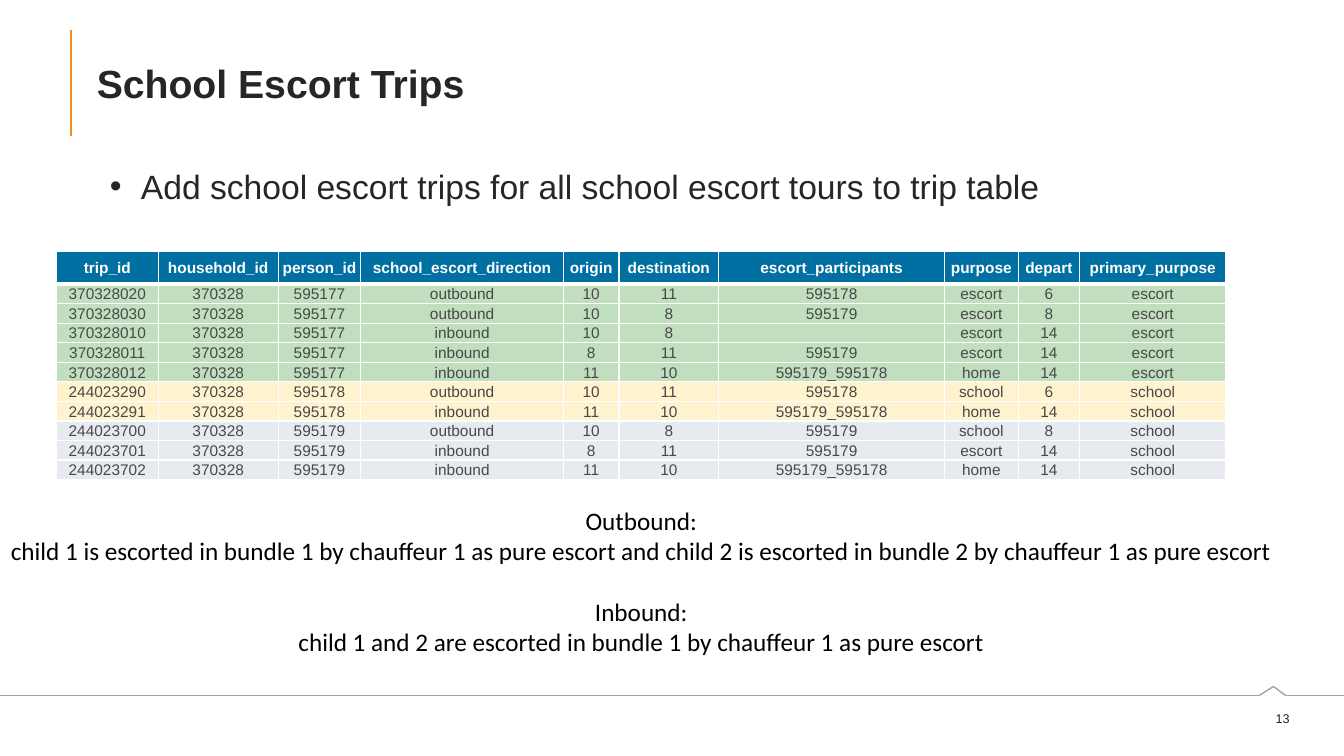
from itertools import pairwise

from lxml.etree import SubElement
from pptx import Presentation
from pptx.dml.color import RGBColor
from pptx.enum.shapes import MSO_CONNECTOR as Connector
from pptx.enum.text import MSO_ANCHOR as Anchor, PP_ALIGN as Align
from pptx.oxml.ns import qn
from pptx.util import Inches, Pt

DARK, WHITE, ORANGE, GRAY = "262626", "FFFFFF", "F68B1F", "A3A3A5"
HEADER_FILL, CELL_TEXT = "006FA1", "48484A"
GREEN, YELLOW, PALE = "C1DFBF", "FFF3CF", "E7EBF0"

COLUMNS = {
    "trip_id": 1.01, "household_id": 1.19, "person_id": 0.82,
    "school_escort_direction": 2.01, "origin": 0.55, "destination": 0.99,
    "escort_participants": 2.24, "purpose": 0.73, "depart": 0.61,
    "primary_purpose": 1.45,
}
HOUSEHOLD = "370328"
# Each person: id, row fill, primary purpose, and the trips as
# (trip, direction, origin, destination, participants, purpose, depart)
PERSONS = [
    ("595177", GREEN, "escort", [
        ("370328020", "outbound", "10", "11", "595178", "escort", "6"),
        ("370328030", "outbound", "10", "8", "595179", "escort", "8"),
        ("370328010", "inbound", "10", "8", "", "escort", "14"),
        ("370328011", "inbound", "8", "11", "595179", "escort", "14"),
        ("370328012", "inbound", "11", "10", "595179_595178", "home", "14"),
    ]),
    ("595178", YELLOW, "school", [
        ("244023290", "outbound", "10", "11", "595178", "school", "6"),
        ("244023291", "inbound", "11", "10", "595179_595178", "home", "14"),
    ]),
    ("595179", PALE, "school", [
        ("244023700", "outbound", "10", "8", "595179", "school", "8"),
        ("244023701", "inbound", "8", "11", "595179", "escort", "14"),
        ("244023702", "inbound", "11", "10", "595179_595178", "home", "14"),
    ]),
]
NOTES = [
    ("Outbound:", "child 1 is escorted in bundle 1 by chauffeur 1 as pure escort "
                  "and child 2 is escorted in bundle 2 by chauffeur 1 as pure escort"),
    ("Inbound:", "child 1 and 2 are escorted in bundle 1 by chauffeur 1 as pure escort"),
]


def color(hex_string):
    return RGBColor.from_string(hex_string)


def add_span(para, text, size, hex_string, font="Arial", bold=False):
    span = para.add_run()
    span.text = text
    span.font.name = font
    span.font.size = Pt(size)
    span.font.bold = bold
    span.font.color.rgb = color(hex_string)


def add_line(slide, start, end, hex_string, width):
    line = slide.shapes.add_connector(
        Connector.STRAIGHT, *(Inches(value) for value in (*start, *end)))
    line.line.color.rgb = color(hex_string)
    line.line.width = Pt(width)
    SubElement(line._element.spPr, qn("a:effectLst"))


def add_text_frame(slide, box):
    frame = slide.shapes.add_textbox(*map(Inches, box)).text_frame
    frame.word_wrap = True
    return frame


def fill_title(slide, box):
    left, top, width, height = box
    add_line(slide, (left - 0.16, top), (left - 0.16, top + height), ORANGE, 1.5)
    title = slide.shapes.title
    title.left, title.top, title.width, title.height = map(Inches, box)
    title.text_frame.vertical_anchor = Anchor.MIDDLE
    para = title.text_frame.paragraphs[0]
    para.alignment = Align.LEFT
    add_span(para, "School Escort Trips", 28, DARK, bold=True)


def add_bullet(slide, box):
    para = add_text_frame(slide, box).paragraphs[0]
    properties = para._p.get_or_add_pPr()
    properties.set("marL", str(Inches(0.44)))
    properties.set("indent", str(Inches(-0.31)))
    SubElement(properties, qn("a:buFont"), typeface="Arial")
    SubElement(properties, qn("a:buChar"), char="•")
    add_span(para, "Add school escort trips for all school escort tours to trip table",
             24, DARK)


def add_borders(cell, top, bottom):
    """Draw white cell borders; top and bottom are widths in points."""
    properties = cell._tc.get_or_add_tcPr()
    for tag, width in (("lnL", 1), ("lnR", 1), ("lnT", top), ("lnB", bottom)):
        line = SubElement(properties, qn(f"a:{tag}"), w=str(Pt(width)))
        fill = SubElement(line, qn("a:solidFill"))
        SubElement(fill, qn("a:srgbClr"), val=WHITE)


def fill_cell(cell, text, fill, hex_string, bold, top, bottom):
    cell.margin_left = cell.margin_right = cell.margin_top = Inches(0.01)
    cell.margin_bottom = 0
    cell.vertical_anchor = Anchor.MIDDLE
    add_borders(cell, top, bottom)
    cell.fill.solid()
    cell.fill.fore_color.rgb = color(fill)
    para = cell.text_frame.paragraphs[0]
    para.alignment = Align.CENTER
    if text:
        add_span(para, text, 11, hex_string, bold=bold)
    else:
        SubElement(para._p, qn("a:endParaRPr"), sz="1100")


def add_trip_table(slide, box):
    rows = [(HEADER_FILL, list(COLUMNS))]
    for person, fill, primary, trips in PERSONS:
        for trip, *details in trips:
            rows.append((fill, [trip, HOUSEHOLD, person, *details, primary]))
    frame = slide.shapes.add_table(len(rows), len(COLUMNS), *map(Inches, box))
    table = frame.table
    table.horz_banding = False
    for column, width in zip(table.columns, COLUMNS.values()):
        column.width = Inches(width)
    for index, (fill, texts) in enumerate(rows):
        header = index == 0
        table.rows[index].height = Inches(0.33 if header else 0.17)
        for cell, text in zip(table.rows[index].cells, texts):
            fill_cell(cell, text, fill, WHITE if header else CELL_TEXT, header,
                      top=3 if index == 1 else 1, bottom=3 if header else 1)


def add_notes_text(slide, box):
    frame = add_text_frame(slide, box)
    for index, (heading, sentence) in enumerate(NOTES):
        first = frame.add_paragraph() if index else frame.paragraphs[0]
        if index:
            first.space_before = Pt(22)
        for para, text in ((first, heading), (frame.add_paragraph(), sentence)):
            para.alignment = Align.CENTER
            add_span(para, text, 18, "000000", font="Calibri")


def add_footer(slide, box):
    """Draw the peaked rule along the top of the box and the page number below."""
    left, top, width, height = box
    base = top + 0.09
    points = [(left, base), (left + 12.49, base), (left + 12.63, top),
              (left + 12.75, base), (left + width, base)]
    for start, end in pairwise(points):
        add_line(slide, start, end, GRAY, 1)
    frame = add_text_frame(slide, (left + 12.33, top + 0.19, 0.56, 0.25))
    frame.vertical_anchor = Anchor.MIDDLE
    para = frame.paragraphs[0]
    para.alignment = Align.RIGHT
    add_span(para, "13", 9, DARK)


def main():
    deck = Presentation()
    deck.slide_width, deck.slide_height = Inches(13.33), Inches(7.5)
    slide = deck.slides.add_slide(deck.slide_layouts[5])
    add_footer(slide, (0, 6.81, 13.33, 0.69))
    fill_title(slide, (0.86, 0.3, 11.8, 1.05))
    add_bullet(slide, (0.86, 1.6, 11.72, 0.6))
    add_trip_table(slide, (0.56, 2.49, 11.6, 2.03))
    add_notes_text(slide, (-0.21, 4.96, 13.14, 1.62))
    deck.save("out.pptx")


if __name__ == "__main__":
    main()
